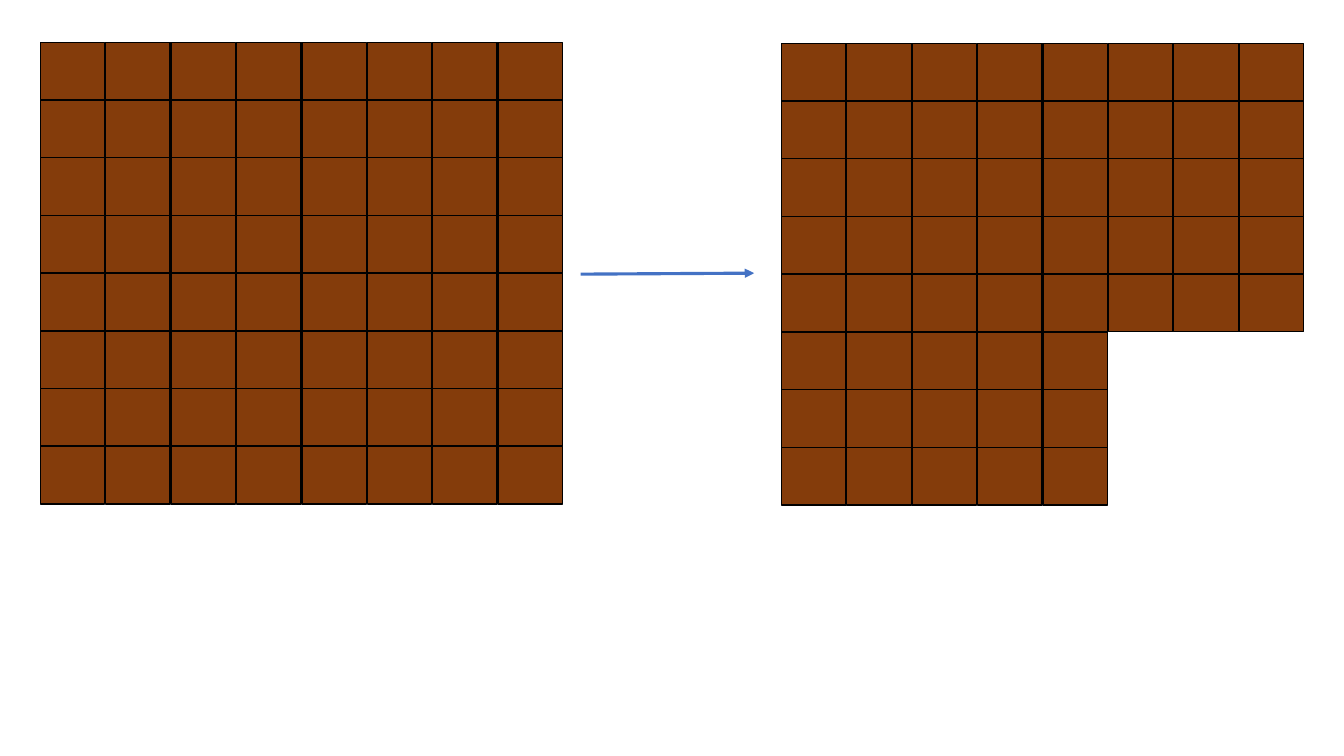
"""Build a slide showing a square chocolate bar and the same bar with a corner removed."""
import dataclasses

import lxml.etree
import pptx
import pptx.dml.color
import pptx.enum.shapes
import pptx.oxml.ns
import pptx.slide
import pptx.util

CHOCOLATE = "843C0B"
OUTLINE = "000000"
ARROW = "4472C4"
PIECE_WIDTH = 0.64
PIECE_HEIGHT = 0.57
COLUMN_PITCH = 4.54 / 7
ROW_PITCH = 4.01 / 7


@dataclasses.dataclass(frozen=True)
class ChocolateBar:
    left: float
    top: float
    column_heights: tuple[int, ...]


BARS = (
    ChocolateBar(0.4, 0.42, (8,) * 8),
    ChocolateBar(7.75, 0.43, (8,) * 5 + (5,) * 3),
)


def color(value: str) -> pptx.dml.color.RGBColor:
    return pptx.dml.color.RGBColor.from_string(value)


def draw_piece(slide: pptx.slide.Slide, left: float, top: float) -> None:
    piece = slide.shapes.add_shape(
        pptx.enum.shapes.MSO_SHAPE.RECTANGLE,
        pptx.util.Inches(left),
        pptx.util.Inches(top),
        pptx.util.Inches(PIECE_WIDTH),
        pptx.util.Inches(PIECE_HEIGHT),
    )
    piece.shadow.inherit = False
    piece.fill.solid()
    piece.fill.fore_color.rgb = color(CHOCOLATE)
    piece.line.color.rgb = color(OUTLINE)
    piece.line.width = pptx.util.Pt(1)


def draw_bar(slide: pptx.slide.Slide, bar: ChocolateBar) -> None:
    for column, height in enumerate(bar.column_heights):
        for row in range(height):
            draw_piece(slide, bar.left + column * COLUMN_PITCH, bar.top + row * ROW_PITCH)


def draw_arrow(slide: pptx.slide.Slide) -> None:
    arrow = slide.shapes.add_connector(
        pptx.enum.shapes.MSO_CONNECTOR.STRAIGHT,
        pptx.util.Inches(5.76),
        pptx.util.Inches(2.72),
        pptx.util.Inches(7.48),
        pptx.util.Inches(2.71),
    )
    arrow.line.color.rgb = color(ARROW)
    arrow.line.width = pptx.util.Pt(2.25)
    properties = arrow._element.spPr
    line = properties.find(pptx.oxml.ns.qn("a:ln"))
    lxml.etree.SubElement(line, pptx.oxml.ns.qn("a:tailEnd"), type="triangle")
    lxml.etree.SubElement(properties, pptx.oxml.ns.qn("a:effectLst"))


def main() -> None:
    presentation = pptx.Presentation()
    presentation.slide_width = pptx.util.Inches(13.33)
    presentation.slide_height = pptx.util.Inches(7.5)
    slide = presentation.slides.add_slide(presentation.slide_layouts[6])
    for bar in BARS:
        draw_bar(slide, bar)
    draw_arrow(slide)
    presentation.save("out.pptx")


if __name__ == "__main__":
    main()
